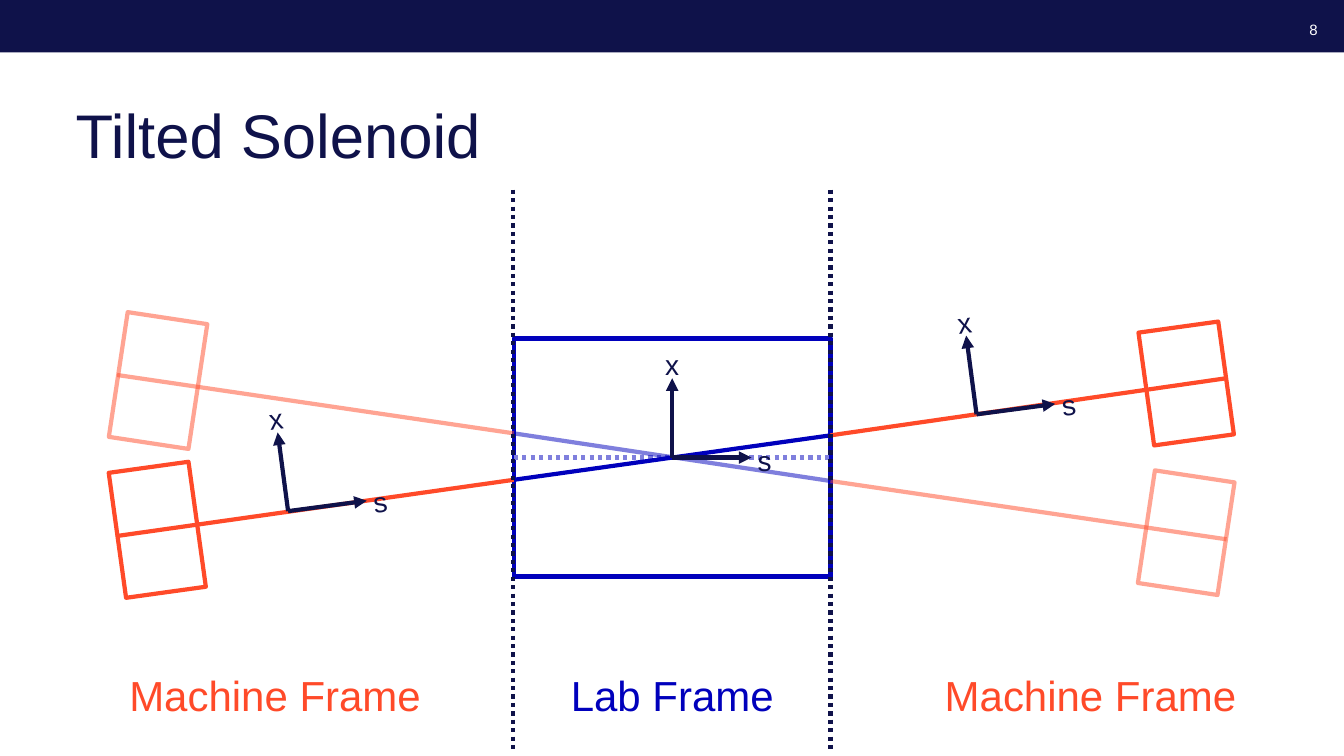
from dataclasses import dataclass
from math import cos, radians, sin

from lxml.etree import SubElement
from pptx import Presentation
from pptx.dml.color import RGBColor
from pptx.enum.dml import MSO_LINE
from pptx.enum.shapes import MSO_CONNECTOR, MSO_SHAPE
from pptx.enum.text import MSO_ANCHOR, MSO_AUTO_SIZE, PP_ALIGN
from pptx.oxml.ns import qn
from pptx.shapes.autoshape import Shape
from pptx.shapes.connector import Connector
from pptx.util import Cm, Pt

COLORS = {
    "navy": "0F124A",
    "blue": "0000BC",
    "pale_blue": "7F7FDD",
    "orange": "FF4A29",
    "white": "FFFFFF",
}
LEFT_SIDE, RIGHT_SIDE = 1, 3

Point = tuple[float, float]
Area = tuple[float, float, float, float]


@dataclass
class Beam:
    points: list[Point]  # magnet, solenoid entry, solenoid exit, magnet
    magnets: list[Area]
    tilt: float
    faint: bool


@dataclass
class Axes:
    origin: Point
    tilt: float


@dataclass
class Caption:
    text: str
    left: float
    color: str


BEAMS = [
    Beam([(2.92, 13.51), (12.95, 12.09), (20.93, 10.97), (30.91, 9.53)],
         [(2.95, 11.76, 2.03, 3.18), (28.88, 8.23, 2.03, 2.87)], -7.9, False),
    Beam([(2.95, 9.45), (12.95, 10.92), (20.93, 12.12), (30.91, 13.59)],
         [(2.97, 8, 2.03, 3.18), (28.88, 11.99, 2.03, 2.87)], 8.6, True),
]
AXES = [
    Axes((16.94, 11.53), 0),
    Axes((24.61, 10.44), -7.5),
    Axes((7.26, 12.88), -7.5),
]
CAPTIONS = [
    Caption("Machine Frame", 2.92, "orange"),
    Caption("Lab Frame", 12.93, "blue"),
    Caption("Machine Frame", 23.47, "orange"),
]


def rgb(name: str) -> RGBColor:
    return RGBColor.from_string(COLORS[name])


def style_line(item: Shape | Connector, color: str, faint: bool = False) -> None:
    item.line.color.rgb = rgb(color)
    item.line.width = Pt(3)
    if faint:
        tint = item.element.spPr.find(".//" + qn("a:srgbClr"))
        SubElement(tint, qn("a:alpha")).set("val", "50000")


def add_line(shapes, start: Point, end: Point, color: str, faint: bool = False,
             dotted: bool = False, arrow: bool = False) -> Connector:
    ends = [Cm(value) for value in (*start, *end)]
    line = shapes.add_connector(MSO_CONNECTOR.STRAIGHT, *ends)
    style_line(line, color, faint)
    if dotted:
        line.line.dash_style = MSO_LINE.ROUND_DOT
    if arrow:
        outline = line.element.spPr.find(qn("a:ln"))
        SubElement(outline, qn("a:tailEnd")).set("type", "triangle")
    SubElement(line.element.spPr, qn("a:effectLst"))
    return line


def add_frame(shapes, area: Area, color: str, tilt: float = 0,
              faint: bool = False) -> Shape:
    box = shapes.add_shape(MSO_SHAPE.RECTANGLE, *map(Cm, area))
    box.rotation = tilt
    box.shadow.inherit = False
    box.fill.background()
    style_line(box, color, faint)
    return box


def format_text(box: Shape, text: str, size: float, color: str,
                align: PP_ALIGN, spacing: float | None = None) -> None:
    box.text_frame.text = text
    paragraph = box.text_frame.paragraphs[0]
    paragraph.alignment = align
    if spacing:
        paragraph.line_spacing = Pt(spacing)
    font = paragraph.runs[0].font
    font.name = "Arial"
    font.size = Pt(size)
    font.color.rgb = rgb(color)


def add_label(shapes, area: Area, text: str, size: float, color: str,
              align: PP_ALIGN = PP_ALIGN.CENTER, tilt: float = 0) -> None:
    box = shapes.add_textbox(*map(Cm, area))
    box.rotation = tilt
    box.text_frame.word_wrap = True
    box.text_frame.auto_size = MSO_AUTO_SIZE.SHAPE_TO_FIT_TEXT
    format_text(box, text, size, color, align, 37)


def add_beam(shapes, beam: Beam) -> None:
    for index, color in enumerate(("orange", "blue", "orange")):
        start, end = beam.points[index:index + 2]
        line = add_line(shapes, start, end, color, beam.faint)
        if index == 1:
            continue
        magnet = add_frame(shapes, beam.magnets[index // 2], "orange",
                           beam.tilt, beam.faint)
        # Joining ignores the tilt, so the outer end is placed again
        if index == 0:
            line.begin_connect(magnet, LEFT_SIDE)
            line.begin_x, line.begin_y = map(Cm, start)
        else:
            line.end_connect(magnet, RIGHT_SIDE)
            line.end_x, line.end_y = map(Cm, end)


def add_axes(shapes, axes: Axes) -> None:
    group = shapes.add_group_shape().shapes
    turn = radians(axes.tilt)

    def place(across: float, down: float) -> Point:
        return (axes.origin[0] + across * cos(turn) - down * sin(turn),
                axes.origin[1] + across * sin(turn) + down * cos(turn))

    width, height = 1.37, 1.4
    for name, tip, middle, align in (
            ("s", (2, 0), (2.59, -0.24), PP_ALIGN.LEFT),
            ("x", (0, -2), (0, -2.65), PP_ALIGN.CENTER)):
        add_line(group, axes.origin, place(*tip), "navy", arrow=True)
        x, y = place(*middle)
        add_label(group, (x - width / 2, y - height / 2, width, height),
                  name, 20, "navy", align, axes.tilt)


def main() -> None:
    deck = Presentation()
    deck.slide_width, deck.slide_height = Cm(33.87), Cm(19.05)
    page = deck.slides.add_slide(deck.slide_layouts[5])
    shapes = page.shapes

    # Title
    title = shapes.title
    title.left, title.top, title.width, title.height = map(
        Cm, (1.65, 2.13, 30.61, 2.97))
    title.text_frame.vertical_anchor = MSO_ANCHOR.TOP
    title.text_frame.auto_size = MSO_AUTO_SIZE.NONE
    title.text_frame.margin_top = Cm(0.3)
    format_text(title, "Tilted Solenoid", 44, "navy", PP_ALIGN.LEFT)

    # Top band and page number
    band = shapes.add_shape(MSO_SHAPE.RECTANGLE, 0, 0, deck.slide_width, Cm(1.32))
    band.shadow.inherit = False
    band.fill.solid()
    band.fill.fore_color.rgb = rgb("navy")
    band.line.fill.background()
    number = shapes.add_textbox(*map(Cm, (32.39, 0.36, 1.07, 0.64)))
    number.text_frame.vertical_anchor = MSO_ANCHOR.MIDDLE
    number.text_frame.word_wrap = False
    format_text(number, "8", 10.7, "white", PP_ALIGN.RIGHT, 16.5)

    # Solenoid and its axis
    solenoid = add_frame(shapes, (12.95, 8.53, 7.98, 6), "blue")
    axis = add_line(shapes, (12.95, 11.53), (20.93, 11.53), "pale_blue", dotted=True)
    axis.begin_connect(solenoid, LEFT_SIDE)
    axis.end_connect(solenoid, RIGHT_SIDE)

    # Beams with their magnets, then the coordinate axes
    for beam in BEAMS:
        add_beam(shapes, beam)
    for axes in AXES:
        add_axes(shapes, axes)

    # Frame borders and captions
    for x in (12.93, 20.93):
        add_line(shapes, (x, 4.78), (x, 18.9), "navy", dotted=True)
    for caption in CAPTIONS:
        add_label(shapes, (caption.left, 16.71, 8.03, 1.5),
                  caption.text, 30, caption.color)

    deck.save("out.pptx")


if __name__ == "__main__":
    main()
